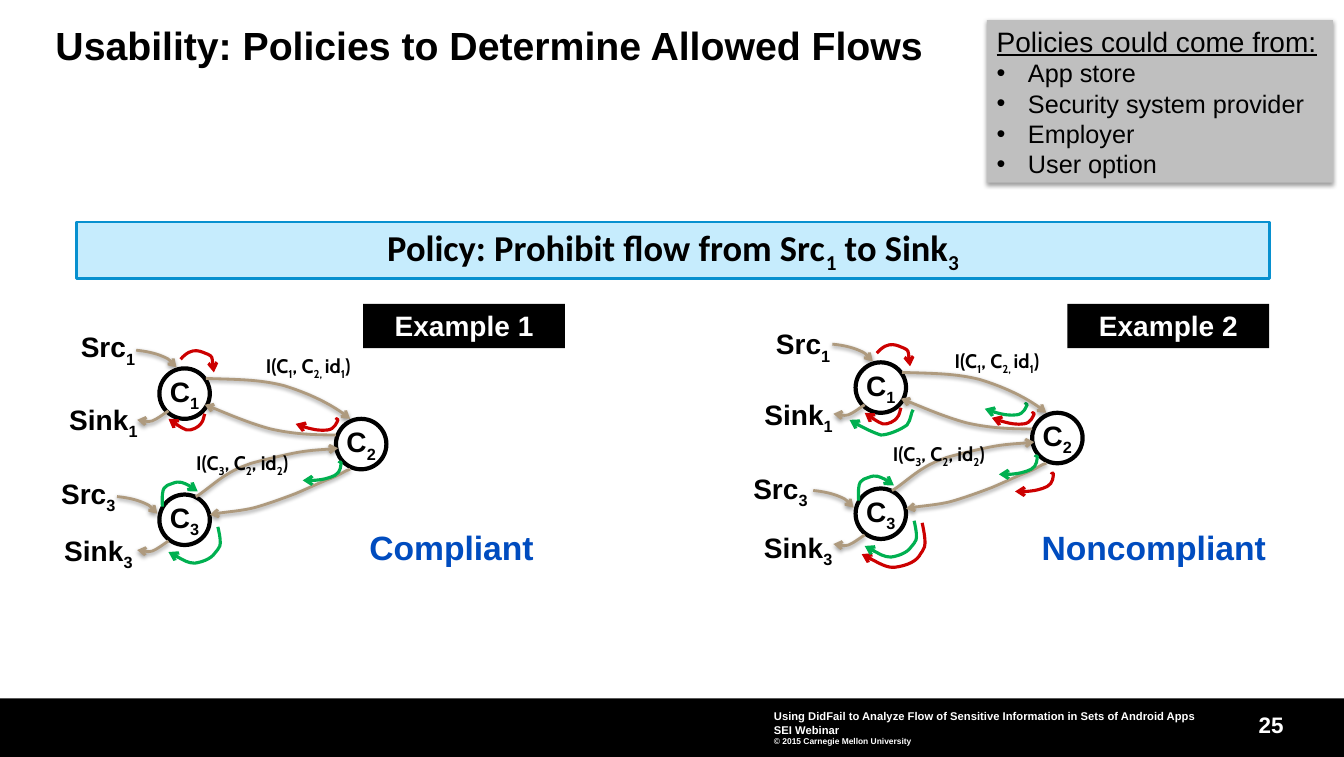
from lxml.etree import SubElement
from pptx import Presentation
from pptx.dml.color import RGBColor
from pptx.enum.shapes import MSO_SHAPE
from pptx.enum.text import MSO_ANCHOR, PP_ALIGN
from pptx.oxml import parse_xml
from pptx.oxml.ns import nsdecls, qn
from pptx.util import Inches, Pt

COLORS = {
    "black": "000000", "white": "FFFFFF", "gray": "BFBFBF", "sky": "C6ECFD",
    "sky edge": "0790CF", "verdict": "004CBF", "flow": "AE9A7E",
    "red": "CC0000", "green": "00B050",
}
SHADOW = (
    f'<a:effectLst {nsdecls("a")}><a:outerShdw blurRad="40000" dist="20000" dir="5400000" '
    'rotWithShape="0"><a:srgbClr val="000000"><a:alpha val="38000"/></a:srgbClr>'
    '</a:outerShdw></a:effectLst>'
)
CENTER, LEFT, RIGHT = PP_ALIGN.CENTER, PP_ALIGN.LEFT, PP_ALIGN.RIGHT
MIDDLE, TOP = MSO_ANCHOR.MIDDLE, MSO_ANCHOR.TOP


def add_box(shapes, at, lines=(), kind=None, fill=None, line=None, color="black", align=CENTER,
            anchor=TOP, insets=(0.1, 0.05, 0.1, 0.05), wrap=True, size=20, bold=True, name="Arial"):
    """Add a box; each line is a list of runs in which every second run is a subscript."""
    place = [Inches(value) for value in at]
    shape = shapes.add_shape(kind, *place) if kind else shapes.add_textbox(*place)
    if kind:
        shape.shadow.inherit = False
        shape.fill.background()
        shape.line.fill.background()
    if fill:
        shape.fill.solid()
        shape.fill.fore_color.rgb = RGBColor.from_string(COLORS[fill])
    if line:
        shape.line.color.rgb = RGBColor.from_string(COLORS[line[0]])
        shape.line.width = Pt(line[1])
    frame = shape.text_frame
    frame_format = dict(zip(("margin_left", "margin_top", "margin_right", "margin_bottom"),
                            [Inches(value) for value in insets]))
    frame_format.update(word_wrap=wrap, vertical_anchor=anchor)
    for key, value in frame_format.items():
        setattr(frame, key, value)
    for index, runs in enumerate(lines):
        paragraph = frame.add_paragraph() if index else frame.paragraphs[0]
        paragraph.alignment = align
        for position, text in enumerate(runs):
            run = paragraph.add_run()
            run.text = text
            for key, value in {"size": Pt(size), "bold": bold, "name": name}.items():
                setattr(run.font, key, value)
            run.font.color.rgb = RGBColor.from_string(COLORS[color])
            if position % 2:
                run._r.get_or_add_rPr().set("baseline", "-25000")
    return shape


def add_flow(shapes, points, color, shift):
    """Draw a chain of cubic curves that ends in an arrowhead."""
    vertices = [(Inches(x + shift[0]), Inches(y + shift[1])) for x, y in points]
    builder = shapes.build_freeform(*vertices[0])
    builder.add_line_segments(vertices[1:], close=False)
    shape = builder.convert_to_shape()
    # Every three straight segments become one cubic curve
    segments = list(shape._element.iter(qn("a:lnTo")))
    for first in range(0, len(segments), 3):
        curve, *others = segments[first:first + 3]
        curve.tag = qn("a:cubicBezTo")
        for segment in others:
            curve.append(segment[0])
            segment.getparent().remove(segment)
    shape.shadow.inherit = False
    shape.fill.background()
    shape.line.color.rgb = RGBColor.from_string(COLORS[color])
    shape.line.width = Pt(2 if color == "flow" else 2.25)
    SubElement(shape.line._get_or_add_ln(), qn("a:tailEnd")).set("type", "arrow")
    if color == "flow":
        properties = shape._element.spPr
        properties.replace(properties.find(qn("a:effectLst")), parse_xml(SHADOW))


presentation = Presentation()
presentation.slide_width, presentation.slide_height = Inches(13.32), Inches(7.5)
slide = presentation.slides.add_slide(presentation.slide_layouts[6])
shapes = slide.shapes
RECTANGLE = MSO_SHAPE.RECTANGLE

# Footer
add_box(shapes, (0, 6.92, 13.32, 0.58), kind=RECTANGLE, fill="black")
add_box(shapes, (12.09, 7.09, 0.63, 0.18), [["25"]], color="white", align=RIGHT, anchor=MIDDLE,
        insets=(0, 0, 0, 0), size=16)
footer = add_box(shapes, (7.67, 6.98, 4.52, 0.47),
                 [["Using DidFail to Analyze Flow of Sensitive Information in Sets of Android Apps"],
                  ["SEI Webinar"], ["© 2015 Carnegie Mellon University"]],
                 color="white", align=LEFT, anchor=MIDDLE, insets=(0, 0.05, 0.05, 0.05), size=8)
footer.text_frame.paragraphs[2].runs[0].font.size = Pt(6)

# Title and policy banner
title = add_box(shapes, (0.55, 0.26, 12.33, 0.43),
                [["Usability: Policies to Determine Allowed Flows"]],
                align=LEFT, insets=(0, 0, 0, 0), size=28)
title.text_frame.paragraphs[0].line_spacing = 0.9
add_box(shapes, (0.76, 2.2, 11.82, 0.56), [["Policy: Prohibit flow from Src", "1", " to Sink", "3"]],
        kind=RECTANGLE, fill="sky", line=("sky edge", 2), anchor=MIDDLE, size=26, name="Calibri")

# Policy origins
origins = add_box(shapes, (9.78, 0.2, 3.43, 1.61),
                  [["Policies could come from:"], ["App store"], ["Security system provider"],
                   ["Employer"], ["User option"]],
                  kind=RECTANGLE, fill="gray", align=LEFT, anchor=MIDDLE, size=18, bold=False)
origins_properties = origins._element.spPr
origins_properties.replace(origins_properties.find(qn("a:effectLst")), parse_xml(SHADOW))
heading, *bullets = origins.text_frame.paragraphs
heading.runs[0].font.size = Pt(20)
heading.runs[0].font.underline = True
for paragraph in bullets:
    properties = paragraph._p.get_or_add_pPr()
    properties.set("marL", str(Inches(0.31)))
    properties.set("indent", str(-Inches(0.31)))
    SubElement(properties, qn("a:buFont")).set("typeface", "Arial")
    SubElement(properties, qn("a:buChar")).set("char", "•")

# Flows shared by both examples
components = {"1": (1.58, 3.65), "3": (1.58, 4.9), "2": (3.33, 4.15)}
shared_flows = [
    ("flow", [(3.33, 4.31), (3.09, 4.31), (2.9, 4.3), (2.68, 4.25), (2.46, 4.19), (2.16, 4.06),
              (2.03, 4.01)]),
    ("flow", [(2.04, 3.75), (2.36, 3.76), (2.57, 3.76), (2.81, 3.82), (3.04, 3.89), (3.32, 4.02),
              (3.47, 4.15)]),
    ("flow", [(3.47, 4.65), (3.42, 4.66), (3.4, 4.69), (3.28, 4.74), (3.17, 4.78), (3.05, 4.84),
              (2.93, 4.89), (2.8, 4.94), (2.63, 5), (2.52, 5.03), (2.4, 5.06), (2.15, 5.08),
              (2.08, 5.1)]),
    ("flow", [(1.94, 4.92), (1.99, 4.9), (2.16, 4.75), (2.25, 4.7), (2.33, 4.65), (2.38, 4.63),
              (2.49, 4.59), (2.6, 4.56), (2.76, 4.52), (2.91, 4.49), (3.06, 4.46), (3.29, 4.45),
              (3.35, 4.44)]),
    ("red", [(1.79, 3.56), (1.91, 3.42), (2, 3.49), (2.06, 3.51), (2.11, 3.53), (2.11, 3.61),
             (2.12, 3.69)]),
    ("green", [(1.61, 5.02), (1.6, 4.81), (1.63, 4.82), (1.71, 4.79), (1.78, 4.76), (1.9, 4.81),
               (1.96, 4.87)]),
    ("green", [(2.16, 5.22), (2.21, 5.44), (2.17, 5.42), (2.13, 5.48), (2.09, 5.54), (2, 5.57),
               (1.93, 5.58), (1.86, 5.58), (1.69, 5.48), (1.67, 5.47)]),
    ("red", [(2.03, 4.1), (2.02, 4.12), (2.02, 4.17), (1.99, 4.2), (1.97, 4.23), (1.9, 4.27),
             (1.85, 4.26), (1.8, 4.24), (1.69, 4.17), (1.67, 4.15)]),
    ("red", [(3.33, 4.16), (3.32, 4.15), (3.35, 4.14), (3.35, 4.16), (3.34, 4.18), (3.32, 4.25),
             (3.25, 4.26), (3.18, 4.27), (3.05, 4.25), (2.93, 4.2)]),
    ("green", [(3.36, 4.59), (3.35, 4.58), (3.38, 4.57), (3.38, 4.58), (3.38, 4.6), (3.38, 4.68),
               (3.32, 4.71), (3.26, 4.74), (3.13, 4.77), (3, 4.76)]),
]
source_curve = [(1.35, 3.47), (1.45, 3.48), (1.54, 3.5), (1.61, 3.53), (1.68, 3.56), (1.72, 3.6),
                (1.75, 3.64)]
sink_curve = [(1.67, 4.07), (1.61, 4.11), (1.56, 4.15), (1.51, 4.17), (1.46, 4.18), (1.41, 4.17),
              (1.36, 4.16)]
for curve, offset in ((source_curve, (-0.19, 1.45)), (sink_curve, (0, 1.29))):
    shared_flows.append(("flow", curve))
    shared_flows.append(("flow", [(x + offset[0], y + offset[1]) for x, y in curve]))

# Flows that only the noncompliant example has
extra_flows = [
    ("green", [(x - 0.07, y - 0.09) for x, y in shared_flows[8][1]]),
    ("green", [(2.15, 4.12), (2.13, 4.14), (2.13, 4.22), (2.09, 4.27), (2.04, 4.31), (1.91, 4.37),
               (1.83, 4.37), (1.74, 4.34), (1.54, 4.24), (1.52, 4.22)]),
    ("red", [(x + 0.16, y + 0.17) for x, y in shared_flows[9][1]]),
    ("red", [(2.24, 5.24), (2.3, 5.52), (2.25, 5.49), (2.21, 5.57), (2.16, 5.64), (2.05, 5.67),
             (1.97, 5.68), (1.89, 5.69), (1.66, 5.56), (1.64, 5.55)]),
]
endpoints = [["Src", "1"], ["Src", "3"], ["Sink", "1"], ["Sink", "3"]]
intents = [["I(C", "1", ", C", "2, ", "id", "1", ")"], ["I(C", "3", ", C", "2", ", id", "2", ")"]]
examples = [
    {"title": "Example 1", "title left": 3.6, "verdict": "Compliant",
     "verdict at": (3.14, 5.17, 2.67, 0.5), "shift": (0, 0), "flows": shared_flows,
     "endpoints": [(0.59, 3.22, 0.96, 0.44), (0.44, 4.67, 0.87, 0.4),
                   (0.53, 3.94, 0.99, 0.44), (0.39, 5.24, 1.17, 0.44)],
     "intents": [(2.31, 3.46, 1.49, 0.34), (1.64, 4.42, 1.52, 0.34)]},
    {"title": "Example 2", "title left": 10.58, "verdict": "Noncompliant",
     "verdict at": (9.8, 5.17, 3.27, 0.5), "shift": (6.9, -0.06),
     "flows": extra_flows + shared_flows,
     "endpoints": [(7.58, 3.19, 0.76, 0.44), (7.3, 4.62, 0.87, 0.4),
                   (7.45, 3.89, 0.93, 0.44), (7.4, 5.21, 1.02, 0.4)],
     "intents": [(9.17, 3.41, 1.42, 0.34), (8.56, 4.33, 1.49, 0.34)]},
]

# Example diagrams
for example in examples:
    add_box(shapes, (example["title left"], 3.01, 2, 0.44), [[example["title"]]],
            kind=RECTANGLE, fill="black", color="white")
    add_box(shapes, example["verdict at"], [[example["verdict"]]],
            kind=RECTANGLE, fill="white", color="verdict", size=24)
    diagram = shapes.add_group_shape().shapes
    shift = example["shift"]
    for number, (left, top) in components.items():
        add_box(diagram, (left + shift[0], top + shift[1], 0.5, 0.5), [["C", number]],
                kind=MSO_SHAPE.OVAL, line=("black", 3), anchor=MIDDLE, insets=(0, 0, 0, 0),
                wrap=False)
    for at, runs in zip(example["endpoints"], endpoints):
        add_box(diagram, at, [runs])
    for color, points in example["flows"]:
        add_flow(diagram, points, color, shift)
    for at, runs in zip(example["intents"], intents):
        add_box(diagram, at, [runs], size=14, name="Cabin")

presentation.save("out.pptx")
